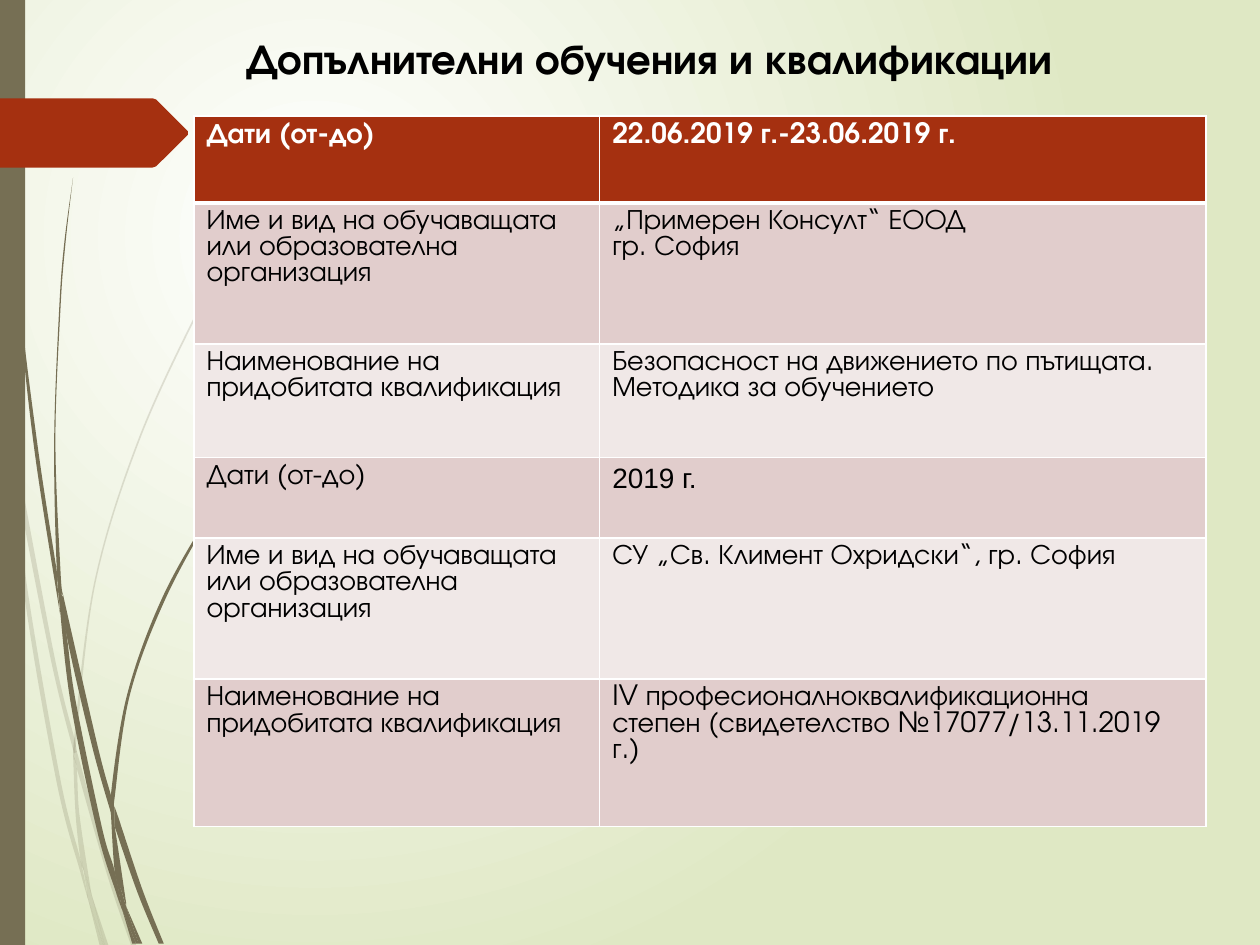
import pptx
import pptx.dml.color
import pptx.enum.shapes
import pptx.enum.text
import pptx.oxml
import pptx.oxml.ns
import pptx.util
from pptx.util import Inches

COLORS = {"olive": "766F54", "rust": "A53010", "white": "FFFFFF", "black": "000000",
          "meadow": "DFE8C4", "rose": "E1CDCC", "pale": "F0E8E7"}
FONT = "TeX Gyre Adventor"
NS = pptx.oxml.ns.nsdecls("a")

# Each blade of grass is a pair of smooth edges: one way along it, then back
FAINT_BLADES = [
    ([(.08, 3.5), (.06, 3.22), (0, 2.82)], [(0, 2.99), (.07, 3.44), (.08, 3.5)]),
    ([(.1, 3.45), (.12, 3.76), (.4, 5.22), (.59, 5.99)], [(.59, 5.86), (.43, 5.2), (.1, 3.45)]),
    ([(1.08, 7.5), (.88, 6.92), (.64, 6.07), (.61, 5.96)], [(.61, 6.1), (.85, 6.94), (1.04, 7.5)]),
    ([(.83, 7.5), (.86, 7.5)], [(.73, 7.11), (.83, 7.5)]),
    ([(.7, 7.14), (.64, 6.83), (.48, 6.19), (.22, 4.69), (.12, 3.76), (.08, 3.5)],
     [(.08, 3.5), (.19, 4.7), (.45, 6.21), (.64, 6.93), (.7, 7.14)]),
    ([(.58, 5.99), (.6, 6.46), (.64, 6.83), (.67, 6.92), (.73, 7.11)],
     [(.72, 7.06), (.63, 6.46), (.61, 6.1), (.58, 5.99)]),
    ([(.61, 5.96), (.61, 5.84), (.76, 4.62), (1.11, 3.49), (1.59, 2.45), (1.87, 1.98), (2.17, 1.54)],
     [(2.17, 1.53), (1.86, 1.97), (1.58, 2.44), (1.1, 3.48), (.75, 4.61), (.59, 5.84), (.61, 5.96)]),
    ([(.7, 7.14), (.79, 7.5)], [(.82, 7.5), (.7, 7.14)]),
    ([(.61, 6.08), (.61, 6.1), (.61, 5.96), (.59, 5.86)], [(.58, 5.99), (.61, 6.08)]),
    ([(.65, 6.83), (.69, 7.07), (.7, 7.14), (.82, 7.5)], [(.83, 7.5), (.73, 7.11), (.67, 6.92), (.65, 6.83)]),
]
DARK_BLADES = [
    ([(.02, 0), (.03, .48), (.05, 1.1), (.14, 2.33), (.27, 3.55), (.46, 4.77), (.47, 4.81)],
     [(.45, 4.57), (.45, 4.53), (.3, 3.55), (.15, 2.32), (.06, 1.09), (.04, .48), (.03, 0)]),
    ([(.5, 4.72), (.53, 5.05), (.73, 5.92), (.88, 6.45)], [(.88, 6.31), (.77, 5.9), (.5, 4.72)]),
    ([(1.3, 7.49), (1.13, 7.06), (.94, 6.49), (.91, 6.41)], [(.91, 6.56), (1.09, 7.08), (1.26, 7.49)]),
    ([(.97, 7.22), (.91, 6.91), (.81, 6.57), (.6, 5.56), (.53, 5.05), (.47, 4.77)],
     [(.47, 4.77), (.56, 5.57), (.77, 6.59), (.92, 7.08), (.97, 7.22)]),
    ([(.5, 4.72), (.48, 4.53), (.44, 3.49), (.48, 2.45), (.52, 1.93), (.58, 1.41)],
     [(.58, 1.41), (.51, 1.93), (.47, 2.45), (.43, 3.49), (.45, 4.49), (.49, 4.72)]),
    ([(1.1, 7.49), (1.13, 7.49)], [(1, 7.19), (1.1, 7.49)]),
    ([(.45, 4.49), (.47, 4.77), (.53, 5.05)], [(.5, 4.72), (.49, 4.72), (.45, 4.49)]),
    ([(.91, 6.41), (.91, 6.33), (1.03, 5.52), (1.31, 4.76), (1.69, 4.06), (1.91, 3.74), (2.16, 3.44)],
     [(2.15, 3.44), (1.91, 3.73), (1.68, 4.05), (1.29, 4.74), (1.01, 5.51), (.88, 6.31), (.91, 6.41)]),
    ([(.97, 7.22), (1.05, 7.49)], [(1.08, 7.49), (.97, 7.22)]),
    ([(.88, 6.45), (.91, 6.91), (.96, 7.06), (1, 7.19)], [(1, 7.16), (.91, 6.56), (.88, 6.45)]),
    ([(.88, 6.31), (.88, 6.45), (.91, 6.56)], [(.91, 6.41), (.88, 6.31)]),
    ([(.91, 6.91), (.96, 7.17), (.97, 7.22), (1.08, 7.49)], [(1.1, 7.49), (1, 7.19), (.96, 7.06), (.91, 6.91)]),
]

DATES = "Дати (от-до)"
TRAINER = "Име и вид на обучаващата или образователна организация"
QUALIFICATION = "Наименование на придобитата квалификация"
TRAININGS = [
    (DATES, "22.06.2019 г.-23.06.2019 г."),
    (TRAINER, "„Примерен Консулт“ ЕООД\nгр. София"),
    (QUALIFICATION, "Безопасност на движението по пътищата. Методика за обучението"),
    (DATES, "2019 г."),
    (TRAINER, "СУ „Св. Климент Охридски“, гр. София"),
    (QUALIFICATION, "IV професионалноквалификационна\vстепен (свидетелство №17077/13.11.2019 г.)"),
]


def rgb(name):
    return pptx.dml.color.RGBColor.from_string(COLORS[name])


def curve_handles(edge):
    """Bezier handles and end of each segment of a Catmull-Rom edge."""
    padded = [edge[0], *edge, edge[-1]]
    for before, start, end, after in zip(padded, padded[1:], padded[2:], padded[3:]):
        yield (tuple(s + (e - b) / 6 for b, s, e in zip(before, start, end)),
               tuple(e - (a - s) / 6 for s, e, a in zip(start, end, after)), end)


class SlideBuilder:
    def __init__(self, slide):
        self.slide = slide

    def background(self, inner, outer):
        fill = self.slide.background.fill
        fill.gradient()
        for stop, color in zip(fill.gradient_stops, (inner, outer)):
            stop.color.rgb = rgb(color)
        gradient = self.slide._element.xpath(".//p:bg//a:gradFill")[0]
        for linear in gradient.xpath("./a:lin"):
            gradient.remove(linear)
        gradient.append(pptx.oxml.parse_xml(
            f'<a:path {NS} path="circle"><a:fillToRect l="50000" t="50000" r="100000" b="100000"/></a:path>'))

    def paint(self, shape, color, opacity=100):
        shape.shadow.inherit = False
        shape.fill.solid()
        shape.fill.fore_color.rgb = rgb(color)
        shape.line.fill.background()
        if opacity < 100:
            shape._element.xpath("./p:spPr/a:solidFill/a:srgbClr")[0].append(
                pptx.oxml.parse_xml(f'<a:alpha {NS} val="{opacity * 1000}"/>'))

    def outline(self, points, color, opacity=100, parent=None):
        corners = [(Inches(x), Inches(y)) for x, y in points]
        builder = (parent or self.slide).shapes.build_freeform(*corners[0], scale=1.0)
        builder.add_line_segments(corners[1:], close=True)
        shape = builder.convert_to_shape()
        self.paint(shape, color, opacity)
        return shape

    def blade(self, out, back, opacity, group):
        shape = self.outline(out + back, "olive", opacity, group)
        segments = [*curve_handles(out), (out[-1], back[0], back[0]), *curve_handles(back)]
        for line, handles in zip(shape._element.xpath(".//a:lnTo"), segments):
            points = "".join(f'<a:pt x="{Inches(x) - shape.left}" y="{Inches(y) - shape.top}"/>'
                             for x, y in handles)
            line.getparent().replace(line, pptx.oxml.parse_xml(
                f"<a:cubicBezTo {NS}>{points}</a:cubicBezTo>"))

    def blades(self, blades, opacity):
        group = self.slide.shapes.add_group_shape()
        for out, back in blades:
            self.blade(out, back, opacity, group)

    def bar(self, left, top, width, height, color):
        bar = self.slide.shapes.add_shape(
            pptx.enum.shapes.MSO_SHAPE.RECTANGLE, Inches(left), Inches(top), Inches(width), Inches(height))
        self.paint(bar, color)

    def style(self, paragraph, size, color, bold, font=FONT):
        for run in paragraph.runs:
            run.font.name, run.font.size, run.font.bold = font, pptx.util.Pt(size), bold
            run.font.color.rgb = rgb(color)

    def title(self, text, left, top, width, height):
        title = self.slide.shapes.title
        title.left, title.top, title.width, title.height = map(Inches, (left, top, width, height))
        frame = title.text_frame
        frame.text = text
        frame.vertical_anchor = pptx.enum.text.MSO_ANCHOR.TOP
        frame.paragraphs[0].alignment = pptx.enum.text.PP_ALIGN.CENTER
        self.style(frame.paragraphs[0], 24, "black", True)

    def borders(self, cell, top, bottom):
        properties = cell._tc.get_or_add_tcPr()
        for place, (side, width) in enumerate(zip("LRTB", (1, 1, top, bottom))):
            properties.insert(place, pptx.oxml.parse_xml(
                f'<a:ln{side} {NS} w="{width * 12700}"><a:solidFill>'
                f'<a:srgbClr val="{COLORS["white"]}"/></a:solidFill></a:ln{side}>'))

    def table(self, rows, left, top, widths, heights):
        table = self.slide.shapes.add_table(
            len(rows), len(widths), Inches(left), Inches(top),
            Inches(sum(widths)), Inches(sum(heights))).table
        for column, width in zip(table.columns, widths):
            column.width = Inches(width)
        for index, (texts, height) in enumerate(zip(rows, heights)):
            table.rows[index].height = Inches(height)
            header = index == 0
            fill = "rust" if header else ("pale", "rose")[index % 2]
            for cell, text in zip(table.rows[index].cells, texts):
                cell.text = text
                cell.fill.solid()
                cell.fill.fore_color.rgb = rgb(fill)
                self.borders(cell, 3 if index == 1 else 1, 3 if header else 1)
                font = "Arial" if text == "2019 г." else FONT
                for paragraph in cell.text_frame.paragraphs:
                    if font == FONT:
                        paragraph.line_spacing = pptx.util.Pt(14.9)
                    self.style(paragraph, 16, "white" if header else "black", header, font)


def main():
    deck = pptx.Presentation()
    deck.slide_width, deck.slide_height = Inches(10), Inches(7.5)
    page = SlideBuilder(deck.slides.add_slide(deck.slide_layouts[5]))

    # Backdrop: gradient, grass, side bar and pointer
    page.background("white", "meadow")
    page.blades(FAINT_BLADES, 20)
    page.blades(DARK_BLADES, 100)
    page.bar(0, 0, 0.2, 7.5, "olive")
    page.outline([(0, 0.78), (1.21, 0.78), (1.24, 0.79), (1.49, 1.04), (1.49, 1.07),
                  (1.24, 1.32), (1.21, 1.33), (0, 1.33)], "rust")

    # Content
    page.title("Допълнителни обучения и квалификации", 0.98, 0.21, 8.35, 0.55)
    page.table(TRAININGS, 1.54, 0.92, [3.22, 4.81], [0.69, 1.12, 0.9, 0.64, 1.12, 1.17])

    deck.save("out.pptx")


if __name__ == "__main__":
    main()
